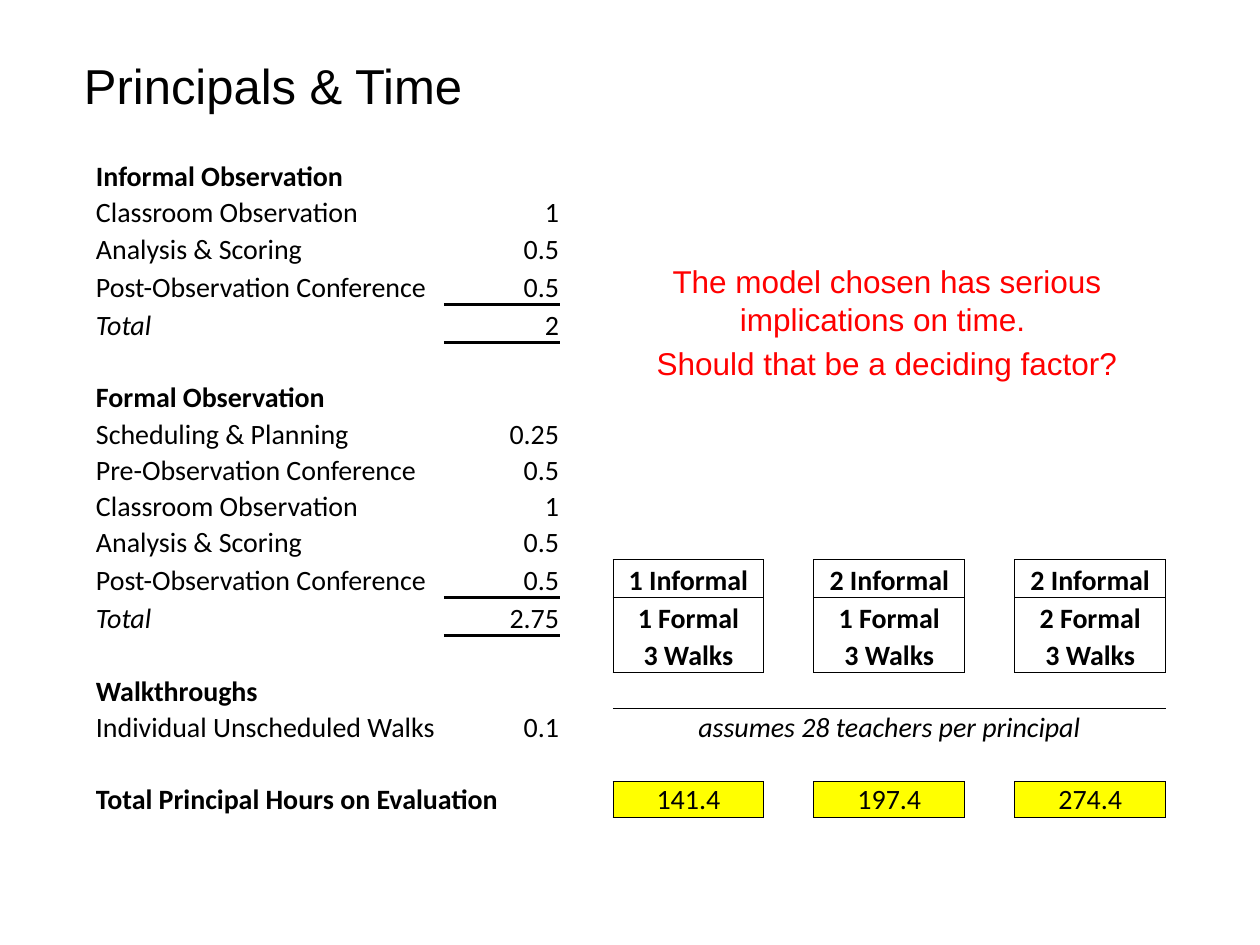
"""Builds the slide on principals' time spent on teacher evaluation."""
from dataclasses import dataclass

from lxml import etree
from pptx import Presentation
from pptx.dml.color import RGBColor
from pptx.enum.text import MSO_ANCHOR, PP_ALIGN
from pptx.oxml.ns import qn
from pptx.util import Emu, Pt

LEFT, CENTER, RIGHT = PP_ALIGN.LEFT, PP_ALIGN.CENTER, PP_ALIGN.RIGHT
TOP, MIDDLE, BOTTOM = MSO_ANCHOR.TOP, MSO_ANCHOR.MIDDLE, MSO_ANCHOR.BOTTOM
PX = 914400 / 126
NO_GRID_STYLE = "{2D5ABB26-0587-4C30-8999-92F81FD0307C}"


@dataclass(frozen=True)
class Theme:
    ink: str = "000000"
    alert: str = "FF0000"
    highlight: str = "FFFF00"
    heading_font: str = "Arial"
    table_font: str = "Calibri"
    title_size: int = 28
    callout_size: int = 18
    table_size: int = 16
    rule_width: float = 2
    box_width: float = 0.5


THEME = Theme()


def px(*lengths):
    return [Emu(round(length * PX)) for length in lengths]


def format_paragraph(paragraph, font, size, color, align, bold=False, italic=False):
    paragraph.alignment = align
    for run in paragraph.runs:
        run.font.name = font
        run.font.size = Pt(size)
        run.font.color.rgb = RGBColor.from_string(color)
        run.font.bold = bold
        run.font.italic = italic


presentation = Presentation()
presentation.slide_width, presentation.slide_height = px(1260, 945)
slide = presentation.slides.add_slide(presentation.slide_layouts[5])

title = slide.shapes.title
title.left, title.top, title.width, title.height = px(84, 53, 1111, 63)
title.text_frame.text = "Principals & Time"
format_paragraph(title.text_frame.paragraphs[0], THEME.heading_font,
                 THEME.title_size, THEME.ink, LEFT)

items = [
    ("Informal Observation", "", "bold"),
    ("Classroom Observation", "1", ""),
    ("Analysis & Scoring", "0.5", ""),
    ("Post-Observation Conference", "0.5", ""),
    ("Total", "2", "italic"),
    ("", "", ""),
    ("Formal Observation", "", "bold"),
    ("Scheduling & Planning", "0.25", ""),
    ("Pre-Observation Conference", "0.5", ""),
    ("Classroom Observation", "1", ""),
    ("Analysis & Scoring", "0.5", ""),
    ("Post-Observation Conference", "0.5", ""),
    ("Total", "2.75", "italic"),
    ("", "", ""),
    ("Walkthroughs", "", "bold"),
    ("Individual Unscheduled Walks", "0.1", ""),
    ("", "", ""),
    ("Total Principal Hours on Evaluation", "", "bold"),
]
scenarios = [
    (3, ["1 Informal", "1 Formal", "3 Walks"], "141.4"),
    (5, ["2 Informal", "1 Formal", "3 Walks"], "197.4"),
    (7, ["2 Informal", "2 Formal", "3 Walks"], "274.4"),
]
scenario_row, note_row, hours_row = 11, 15, 17
column_widths = [349, 116, 53, 151, 50, 151, 50, 151]
row_heights = [36, 36, 37, 38, 38, 36, 36, 37, 36, 36, 36, 38, 38, 37, 36, 36, 37, 36]

contents = {}
edges = []
for row, (label, value, style) in enumerate(items):
    contents[row, 0] = (label, LEFT, style)
    contents[row, 1] = (value, RIGHT, "")
    if label == "Total":
        edges.append((row, 1, "T", THEME.rule_width))
for column, mix, hours in scenarios:
    for offset, line in enumerate(mix):
        contents[scenario_row + offset, column] = (line, CENTER, "bold")
        edges += [(scenario_row + offset, column, side, THEME.box_width) for side in "LR"]
    contents[hours_row, column] = (hours, CENTER, "")
    edges.append((scenario_row, column, "T", THEME.box_width))
    edges.append((scenario_row + len(mix) - 1, column, "B", THEME.box_width))
    edges += [(hours_row, column, side, THEME.box_width) for side in "LRTB"]
contents[note_row, 3] = ("assumes 28 teachers per principal", CENTER, "italic")

neighbours = {"L": (0, -1, "R"), "R": (0, 1, "L"), "T": (-1, 0, "B"), "B": (1, 0, "T")}
borders = {}
for row, column, side, width in edges:
    row_step, column_step, facing = neighbours[side]
    borders[row, column, side] = width
    borders[row + row_step, column + column_step, facing] = width

frame = slide.shapes.add_table(len(row_heights), len(column_widths),
                               *px(95, 158, sum(column_widths), sum(row_heights)))
table = frame.table
table.first_row = table.horz_banding = False
table._tbl.tblPr.find(qn("a:tableStyleId")).text = NO_GRID_STYLE
for column, width in zip(table.columns, px(*column_widths)):
    column.width = width
for row, height in zip(table.rows, px(*row_heights)):
    row.height = height
table.cell(note_row, 3).merge(table.cell(note_row, 7))
table.cell(hours_row, 0).merge(table.cell(hours_row, 1))

for row in range(len(row_heights)):
    for column in range(len(column_widths)):
        cell = table.cell(row, column)
        cell.vertical_anchor = BOTTOM
        cell.margin_left, cell.margin_right, cell.margin_top, cell.margin_bottom = px(1, 1, 1, 0)
        text, align, style = contents.get((row, column), ("", LEFT, ""))
        paragraph = cell.text_frame.paragraphs[0]
        if text:
            paragraph.text = text
            format_paragraph(paragraph, THEME.table_font, THEME.table_size, THEME.ink,
                             align, style == "bold", style == "italic")
        else:
            etree.SubElement(paragraph._p, qn("a:endParaRPr"), sz=str(THEME.table_size * 100))
        properties = cell._tc.get_or_add_tcPr()
        for side in "LRTB":
            if (row, column, side) in borders:
                width = Pt(borders[row, column, side])
                line = etree.SubElement(properties, qn(f"a:ln{side}"), w=str(int(width)))
                fill = etree.SubElement(line, qn("a:solidFill"))
                etree.SubElement(fill, qn("a:srgbClr"), val=THEME.ink)
        if row == hours_row and text and column > 1:
            cell.fill.solid()
            cell.fill.fore_color.rgb = RGBColor.from_string(THEME.highlight)
        else:
            cell.fill.background()

callout = slide.shapes.add_textbox(*px(640, 262, 494, 242))
callout.text_frame.text = ("The model chosen has serious implications on time. \n"
                           "Should that be a deciding factor?")
for paragraph in callout.text_frame.paragraphs:
    format_paragraph(paragraph, THEME.heading_font, THEME.callout_size, THEME.alert, CENTER)
    paragraph.line_spacing = Pt(21.6)
callout.text_frame.paragraphs[1].space_before = Pt(3.6)

for shape, anchor in ((title, MIDDLE), (callout, TOP)):
    text_frame = shape.text_frame
    text_frame.word_wrap = True
    text_frame.vertical_anchor = anchor
    text_frame.margin_left = text_frame.margin_right = 0
    text_frame.margin_top = text_frame.margin_bottom = 0

presentation.save("out.pptx")
